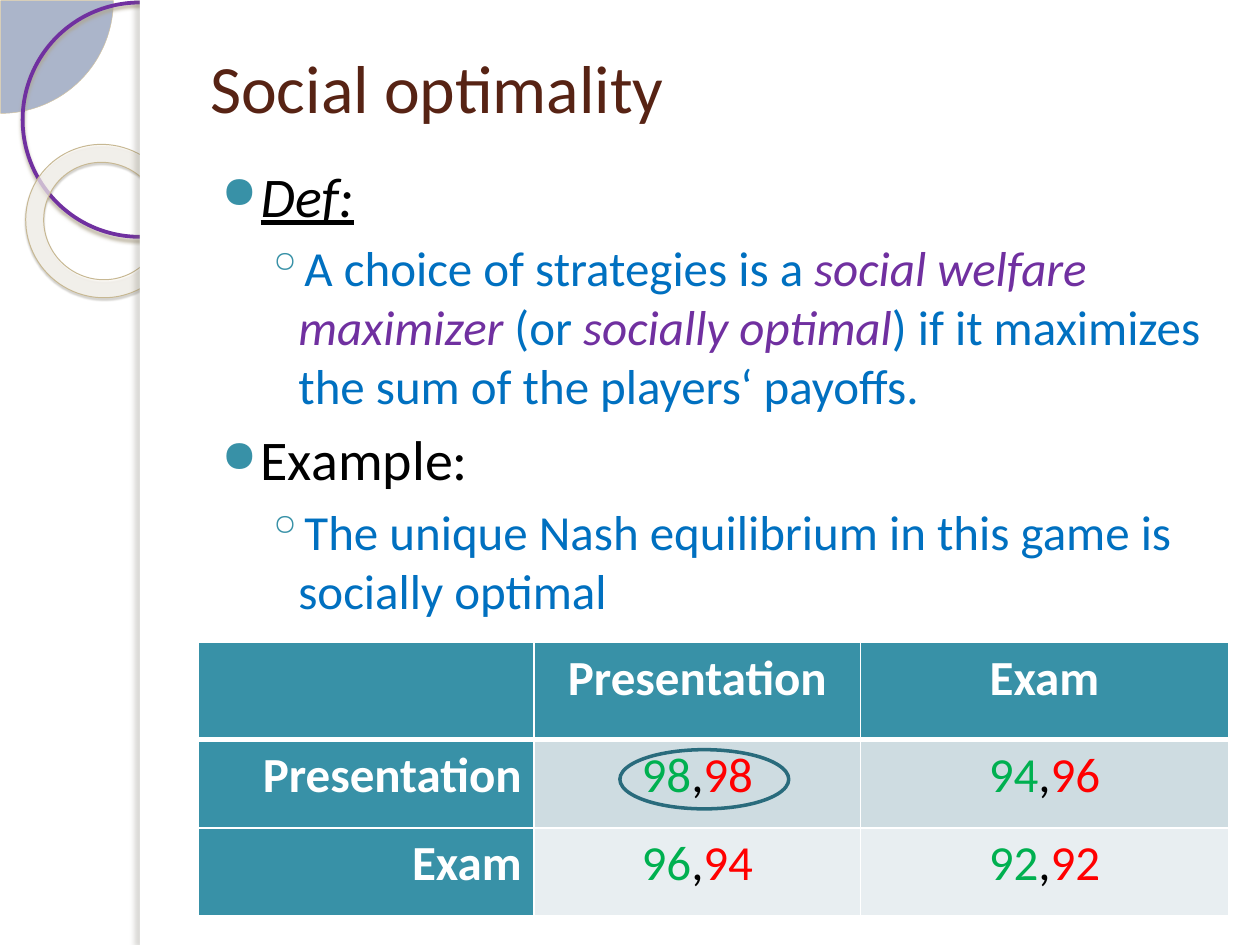
from lxml import etree
from pptx import Presentation
from pptx.dml.color import RGBColor
from pptx.enum import shapes, text
from pptx.oxml import parse_xml
from pptx.oxml.ns import nsdecls, qn
from pptx.util import Inches, Pt

FONT = "Calibri"
WHITE = RGBColor(0xFF, 0xFF, 0xFF)
BLACK = RGBColor(0, 0, 0)
NAVY = RGBColor(0x00, 0x20, 0x60)
SAND = RGBColor(0xD3, 0xC3, 0x9F)
TAN = RGBColor(0xC7, 0xB8, 0x93)
CREAM = RGBColor(0xFF, 0xFC, 0xF6)
PURPLE = RGBColor(0x70, 0x30, 0xA0)
BROWN = RGBColor(0x57, 0x23, 0x14)
BLUE = RGBColor(0x00, 0x70, 0xC0)
TEAL = RGBColor(0x38, 0x91, 0xA7)
DEEP = RGBColor(0x29, 0x6B, 0x7C)
GREEN = RGBColor(0x00, 0xB0, 0x50)
RED = RGBColor(0xFF, 0, 0)
BANDS = [RGBColor(0xCE, 0xDC, 0xE1), RGBColor(0xE8, 0xEE, 0xF1)]
KIND = shapes.MSO_SHAPE
ALIGN = text.PP_ALIGN


def add_form(slide, kind, box, fill=None, alpha=None, line=None, width=1):
    form = slide.shapes.add_shape(kind, *map(Inches, box))
    form.shadow.inherit = False
    if fill is None:
        form.fill.background()
    else:
        form.fill.solid()
        form.fill.fore_color.rgb = fill
        if alpha:
            tint = form.fill._xPr.find(".//" + qn("a:srgbClr"))
            etree.SubElement(tint, qn("a:alpha"), val=str(alpha * 1000))
    if line is None:
        form.line.fill.background()
    else:
        form.line.color.rgb = line
        form.line.width = Pt(width)
    return form


def add_shade(form, color, alpha, blur, dist, angle):
    effects = form._element.spPr.find(qn("a:effectLst"))
    effects.append(parse_xml(
        f'<a:outerShdw {nsdecls("a")} blurRad="{Pt(blur)}" dist="{Pt(dist)}" '
        f'dir="{angle * 60000}" algn="tl" rotWithShape="0"><a:srgbClr val="{color}">'
        f'<a:alpha val="{alpha * 1000}"/></a:srgbClr></a:outerShdw>'))


def add_side(slide, left, top, width, height):
    # Rings at the corner, cut off by the white page
    pie = add_form(slide, KIND.PIE, (left - 0.89, top - 0.89, 1.79, 1.79),
                   NAVY, 33, SAND, 0.25)
    pie.adjustments[0] = 0
    pie.adjustments[1] = 54.02
    ring = add_form(slide, KIND.OVAL, (left + 0.18, top + 0.02, 1.86, 1.86),
                    line=PURPLE, width=2.15)
    add_shade(ring, "B0A68F", 85, 2, 2, 90)
    donut = add_form(slide, KIND.DONUT, (left + 0.2, top + 1.15, 1.23, 1.21),
                     CREAM, 65, TAN, 0.58)
    donut.adjustments[0] = 0.118
    donut.rotation = 38.6
    add_shade(donut, "5A5444", 35, 1, 1.2, 75)
    edge = left + width
    add_form(slide, KIND.RECTANGLE, (edge, top, 10 - edge, height), WHITE)
    strip = add_form(slide, KIND.RECTANGLE, (edge, top, 0.08, height), WHITE)
    add_shade(strip, "736F63", 25, 3, 3, 180)


def add_frame(slide, box):
    frame = slide.shapes.add_textbox(*map(Inches, box)).text_frame
    frame.word_wrap = True
    return frame


def set_font(font, size, color, bold=None):
    font.name, font.size, font.bold = FONT, Pt(size), bold
    font.color.rgb = color


def add_title(slide, *box):
    frame = add_frame(slide, box)
    frame.vertical_anchor = text.MSO_ANCHOR.MIDDLE
    para = frame.paragraphs[0]
    para.text = "Social optimality"
    set_font(para.font, 38.7, BROWN)


def set_bullet(para, mark, left, hang, scale):
    props = para._p.get_or_add_pPr()
    props.set("marL", str(Inches(left)))
    props.set("indent", str(Inches(-hang)))
    color = etree.SubElement(props, qn("a:buClr"))
    etree.SubElement(color, qn("a:srgbClr"), val=str(TEAL))
    etree.SubElement(props, qn("a:buSzPct"), val=str(scale * 1000))
    etree.SubElement(props, qn("a:buChar"), char=mark)


def add_body(slide, *box):
    # Each item: level, then plain and stressed runs in turn
    items = [
        (0, ["", "Def:"]),
        (1, ["A choice of strategies is a ", "social welfare maximizer ", "(or ",
             "socially optimal",
             ") if it maximizes the sum of the players‘ payoffs."]),
        (0, ["Example:"]),
        (1, ["The unique Nash equilibrium in this game is socially optimal"]),
    ]
    looks = [("●", 0.4, 0.31, 80, 32, BLACK, 6),
             ("◦", 0.7, 0.26, 100, 28, BLUE, 5.5)]
    frame = add_frame(slide, box)
    for i, (level, parts) in enumerate(items):
        para = frame.add_paragraph() if i else frame.paragraphs[0]
        mark, left, hang, scale, size, color, gap = looks[level]
        para.level = level
        para.space_before = Pt(gap if i else 0)
        set_bullet(para, mark, left, hang, scale)
        set_font(para.font, size, color)
        for j, part in enumerate(parts):
            if not part:
                continue
            run = para.add_run()
            run.text = part
            set_font(run.font, size, color)
            if j % 2:
                run.font.italic = True
                if level:
                    run.font.color.rgb = PURPLE
                else:
                    run.font.underline = True


def set_cell(cell, fill, top, bottom):
    props = cell._tc.get_or_add_tcPr()
    for side, width in zip("LRTB", (1, 1, top, bottom)):
        props.append(parse_xml(
            f'<a:ln{side} {nsdecls("a")} w="{Pt(width)}"><a:solidFill>'
            f'<a:srgbClr val="{WHITE}"/></a:solidFill></a:ln{side}>'))
    cell.fill.solid()
    cell.fill.fore_color.rgb = fill


def add_game(slide, left, top, width, height):
    rows = [["", "Presentation", "Exam"],
            ["Presentation", "98,98", "94,96"],
            ["Exam", "96,94", "92,92"]]
    table = slide.shapes.add_table(
        3, 3, *map(Inches, (left, top, width, height))).table
    for col, size in zip(table.columns, (2.67, 2.59, 2.92)):
        col.width = Inches(size)
    for row, size in zip(table.rows, (0.77, 0.7, 0.7)):
        row.height = Inches(size)
    for r, row in enumerate(rows):
        for c, words in enumerate(row):
            cell = table.cell(r, c)
            head = r == 0 or c == 0
            set_cell(cell, TEAL if head else BANDS[r - 1],
                     3 if r == 1 else 1, 3 if r == 0 else 1)
            para = cell.text_frame.paragraphs[0]
            para.alignment = ALIGN.CENTER if c else ALIGN.RIGHT
            set_font(para.font, 28, WHITE, head)
            if head:
                para.text = words
                continue
            # Payoffs: row player, comma, column player
            for part, color in zip(words.partition(","), (GREEN, BLACK, RED)):
                run = para.add_run()
                run.text = part
                set_font(run.font, 28, color, False)
    # Ring round the equilibrium
    add_form(slide, KIND.OVAL, (left + 3.35, top + 0.85, 1.34, 0.47),
             line=DEEP, width=2)


def main():
    deck = Presentation()
    deck.slide_width, deck.slide_height = Inches(10), Inches(7.5)
    slide = deck.slides.add_slide(deck.slide_layouts[6])
    add_side(slide, 0, 0, 1.11, 7.5)
    add_title(slide, 1.57, 0.3, 8.2, 0.77)
    add_body(slide, 1.57, 1.23, 8.2, 5.6)
    add_game(slide, 1.57, 5.1, 8.18, 2.2)
    deck.save("out.pptx")


if __name__ == "__main__":
    main()
